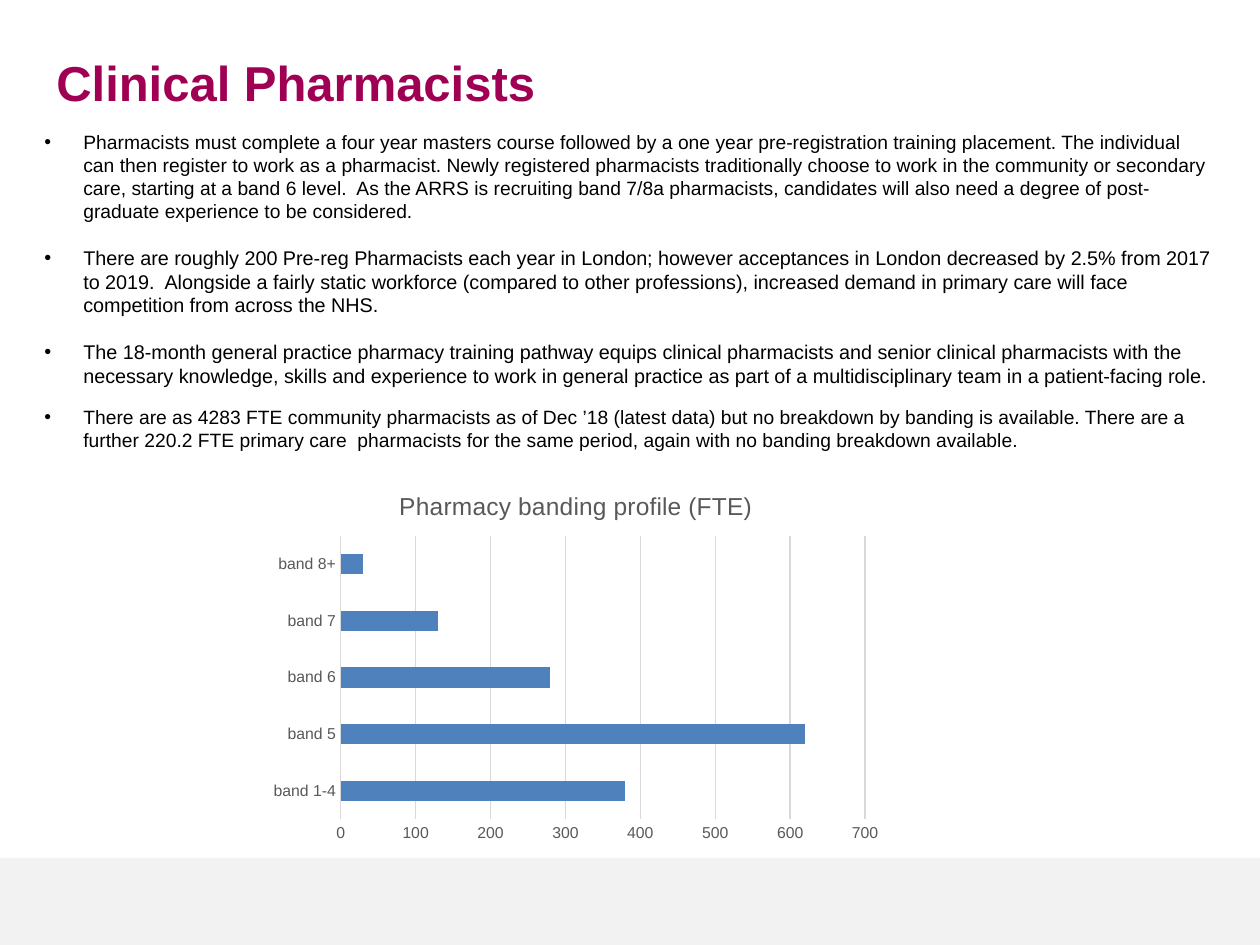
from pptx import Presentation
from pptx.chart.data import CategoryChartData
from pptx.dml.color import RGBColor
from pptx.enum.chart import XL_CHART_TYPE as ChartType, XL_TICK_MARK as TickMark
from pptx.enum.shapes import MSO_SHAPE as Shape
from pptx.oxml.xmlchemy import OxmlElement
from pptx.util import Emu, Pt

SCALE = 914400 // 126
FONT = "Arial"
GREY, RULE = "595959", "D9D9D9"

POINTS = [
    ("Pharmacists must complete a four year masters course followed by a one year "
     "pre-registration training placement. The individual can then register to work as a "
     "pharmacist. Newly registered pharmacists traditionally choose to work in the community "
     "or secondary care, starting at a band 6 level.  As the ARRS is recruiting band 7/8a "
     "pharmacists, candidates will also need a degree of post-graduate experience to be "
     "considered.", 11, 0),
    ("There are roughly 200 Pre-reg Pharmacists each year in London; however acceptances in "
     "London decreased by 2.5% from 2017 to 2019.  Alongside a fairly static workforce "
     "(compared to other professions), increased demand in primary care will face competition "
     "from across the NHS.", 11.3, 13),
    ("The 18-month general practice pharmacy training pathway equips clinical pharmacists and "
     "senior clinical pharmacists with the necessary knowledge, skills and experience to work "
     "in general practice as part of a multidisciplinary team in a patient-facing role.",
     11.3, 13),
    ("There are as 4283 FTE community pharmacists as of Dec ’18 (latest data) but no breakdown "
     "by banding is available. There are a further 220.2 FTE primary care  pharmacists for the "
     "same period, again with no banding breakdown available.", 11, 10.5),
]
BANDS = {"band 1-4": 380, "band 5": 620, "band 6": 280, "band 7": 130, "band 8+": 30}


def px(length):
    return Emu(length * SCALE)


def colour(value):
    return RGBColor.from_string(value)


def style(font, size, hue, bold=False):
    font.name, font.size, font.bold = FONT, Pt(size), bold
    font.color.rgb = colour(hue)


def add_bullet(paragraph, indent):
    props = paragraph._p.get_or_add_pPr()
    props.set("marL", str(px(indent)))
    props.set("indent", str(-px(indent)))
    for tag, key, value in (("a:buFont", "typeface", FONT), ("a:buChar", "char", "•")):
        part = OxmlElement(tag)
        part.set(key, value)
        props.append(part)


def write(paragraph, text, size=11, hue="000000", bold=False, before=0, indent=0):
    if indent:
        add_bullet(paragraph, indent)
    if before:
        paragraph.space_before = Pt(before)
    run = paragraph.add_run()
    run.text = text
    style(run.font, size, hue, bold)


def text_frame(slide, box):
    frame = slide.shapes.add_textbox(*map(px, box)).text_frame
    frame.word_wrap = True
    return frame


def add_footer(slide, box):
    footer = slide.shapes.add_shape(Shape.RECTANGLE, *map(px, box))
    footer.shadow.inherit = False
    footer.fill.solid()
    footer.fill.fore_color.rgb = colour("F2F2F2")
    footer.line.fill.background()


def add_heading(slide, box):
    heading = text_frame(slide, box)
    write(heading.paragraphs[0], "Clinical Pharmacists", size=28, hue="A00054", bold=True)


def add_points(slide, box):
    frame = text_frame(slide, box)
    for index, (text, size, before) in enumerate(POINTS):
        paragraph = frame.add_paragraph() if index else frame.paragraphs[0]
        write(paragraph, text, size=size, before=before, indent=39)


def style_axis(axis):
    axis.major_tick_mark = axis.minor_tick_mark = TickMark.NONE
    style(axis.tick_labels.font, 9, GREY)


def add_banding_chart(slide, box):
    data = CategoryChartData()
    data.categories = list(BANDS)
    data.add_series("Series 1", list(BANDS.values()))
    chart = slide.shapes.add_chart(ChartType.BAR_CLUSTERED, *map(px, box), data).chart
    style(chart.font, 10, "000000")
    chart.has_legend = False
    chart.has_title = True
    write(chart.chart_title.text_frame.paragraphs[0], "Pharmacy banding profile (FTE)",
          size=14, hue=GREY)

    bars = chart.plots[0]
    bars.gap_width = 182
    bars.vary_by_categories = False
    fill = bars.series[0].format.fill
    fill.solid()
    fill.fore_color.rgb = colour("4F81BD")

    bands, fte = chart.category_axis, chart.value_axis
    style_axis(bands)
    style_axis(fte)
    fte.minimum_scale, fte.maximum_scale, fte.major_unit = 0, 700, 100
    fte.has_major_gridlines = True
    fte.format.line.fill.background()
    for line in (bands.format.line, fte.major_gridlines.format.line):
        line.color.rgb = colour(RULE)
        line.width = Pt(0.75)


def main():
    deck = Presentation()
    deck.slide_width, deck.slide_height = px(1260), px(945)
    slide = deck.slides.add_slide(deck.slide_layouts[6])
    add_footer(slide, (0, 858, 1260, 87))
    add_heading(slide, (44, 46, 636, 93))
    add_points(slide, (32, 124, 1197, 363))
    add_banding_chart(slide, (261, 472, 630, 378))
    deck.save("out.pptx")


if __name__ == "__main__":
    main()
